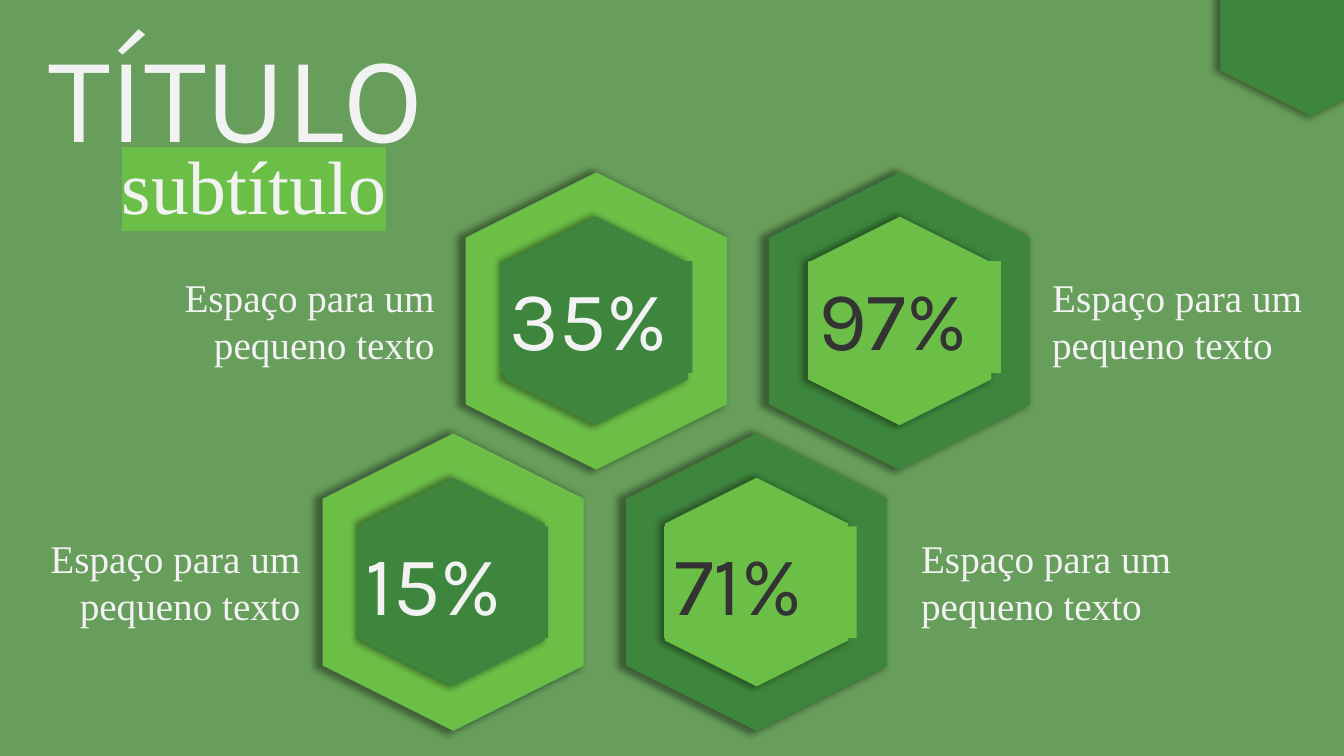
from lxml import etree
from pptx import Presentation
from pptx.dml.color import RGBColor
from pptx.enum import shapes, text
from pptx.oxml import ns
from pptx.util import Pt

# Content
LIME, GREEN, MEADOW = "6BBF47", "3E863D", "679E5B"
WHITE, DARK = "F2F2F2", "333333"
SERIF, SANS = "Times New Roman", "Karla"
LEFT, RIGHT = text.PP_ALIGN.LEFT, text.PP_ALIGN.RIGHT
NOTE = "Espaço para um pequeno texto"

# row, column, value, outer colour, inner colour, value colour
figures = [
    (0, 0, "35%", LIME, GREEN, WHITE),
    (0, 1, "97%", GREEN, LIME, DARK),
    (1, 0, "15%", LIME, GREEN, WHITE),
    (1, 1, "71%", GREEN, LIME, DARK),
]
# row, left edge, alignment
notes = [(0, 744.5, LEFT), (1, 650.9, LEFT), (1, -56.2, RIGHT), (0, 39.6, RIGHT)]

# Layout in points
OUTER, INNER = (212.4, 186.5), (149, 131)
COLUMN_STEP, ROW_STEP, ROW_SHIFT = 216.7, 186.5, -102.2
FIRST_CENTRE = (425.9, 229.3)
CORNER_CENTRE = (937.1, 8.6)

presentation = Presentation()
presentation.slide_width, presentation.slide_height = Pt(960), Pt(540)
slide = presentation.slides.add_slide(presentation.slide_layouts[6])


def colour(value):
    return RGBColor.from_string(value)


def paint(target, value):
    target.fill.solid()
    target.fill.fore_color.rgb = colour(value)


def centre_of(row, column):
    x, y = FIRST_CENTRE
    return x + COLUMN_STEP * column + ROW_SHIFT * row, y + ROW_STEP * row


def add_hexagon(parent, centre, size, fill):
    """Upright hexagon with a soft glow-like shadow."""
    (x, y), (width, height) = centre, size
    shape = parent.add_shape(shapes.MSO_SHAPE.HEXAGON, Pt(x - width / 2),
                             Pt(y - height / 2), Pt(width), Pt(height))
    shape.rotation = 90
    paint(shape, fill)
    shape.line.fill.background()
    shape.shadow.inherit = False
    effects = shape._element.spPr.find(ns.qn("a:effectLst"))
    shadow = etree.SubElement(effects, ns.qn("a:outerShdw"), blurRad="63500",
                              sx="102000", sy="102000", algn="ctr", rotWithShape="0")
    black = etree.SubElement(shadow, ns.qn("a:srgbClr"), val="000000")
    etree.SubElement(black, ns.qn("a:alpha"), val="40000")


def add_text(parent, box, words, size, font_name, ink=WHITE, wrap=False, align=LEFT):
    shape = parent.add_textbox(*map(Pt, box))
    frame = shape.text_frame
    frame.word_wrap = wrap
    frame.auto_size = text.MSO_AUTO_SIZE.SHAPE_TO_FIT_TEXT
    paragraph = frame.paragraphs[0]
    paragraph.alignment = align
    run = paragraph.add_run()
    run.text = words
    for name, value in {"size": Pt(size), "name": font_name}.items():
        setattr(run.font, name, value)
    run.font.color.rgb = colour(ink)
    return shape


def highlight(run, value):
    mark = etree.Element(ns.qn("a:highlight"))
    etree.SubElement(mark, ns.qn("a:srgbClr"), val=value)
    run.font._element.find(ns.qn("a:latin")).addprevious(mark)


# Background
paint(slide.background, MEADOW)

# Outer hexagons
for row, column, _, outer, _, _ in figures:
    add_hexagon(slide.shapes, centre_of(row, column), OUTER, outer)

# Notes beside the hexagons
for row, left, align in notes:
    add_text(slide.shapes, (left, 191.5 + ROW_STEP * row, 277.9, 74.9), NOTE, 28,
             SERIF, wrap=True, align=align)

# Title and subtitle
add_text(slide.shapes, (27.4, 10.1, 311, 113.8), "TÍTULO", 88, SANS)
subtitle = add_text(slide.shapes, (79.9, 95.8, 205.2, 72.7), "subtítulo", 54, SERIF)
highlight(subtitle.text_frame.paragraphs[0].runs[0], LIME)

# Inner hexagons with their values
for row, column, value, _, inner, ink in figures:
    group = slide.shapes.add_group_shape()
    add_hexagon(group.shapes, centre_of(row, column), INNER, inner)
    box = (357.1 + 220.3 * column - 103 * row, 186.5 + 189.4 * row, 137.5, 79.9)
    paint(add_text(group.shapes, box, value, 60, SANS, ink), inner)

# Corner hexagon
add_hexagon(slide.shapes, CORNER_CENTRE, INNER, GREEN)

presentation.save("out.pptx")
